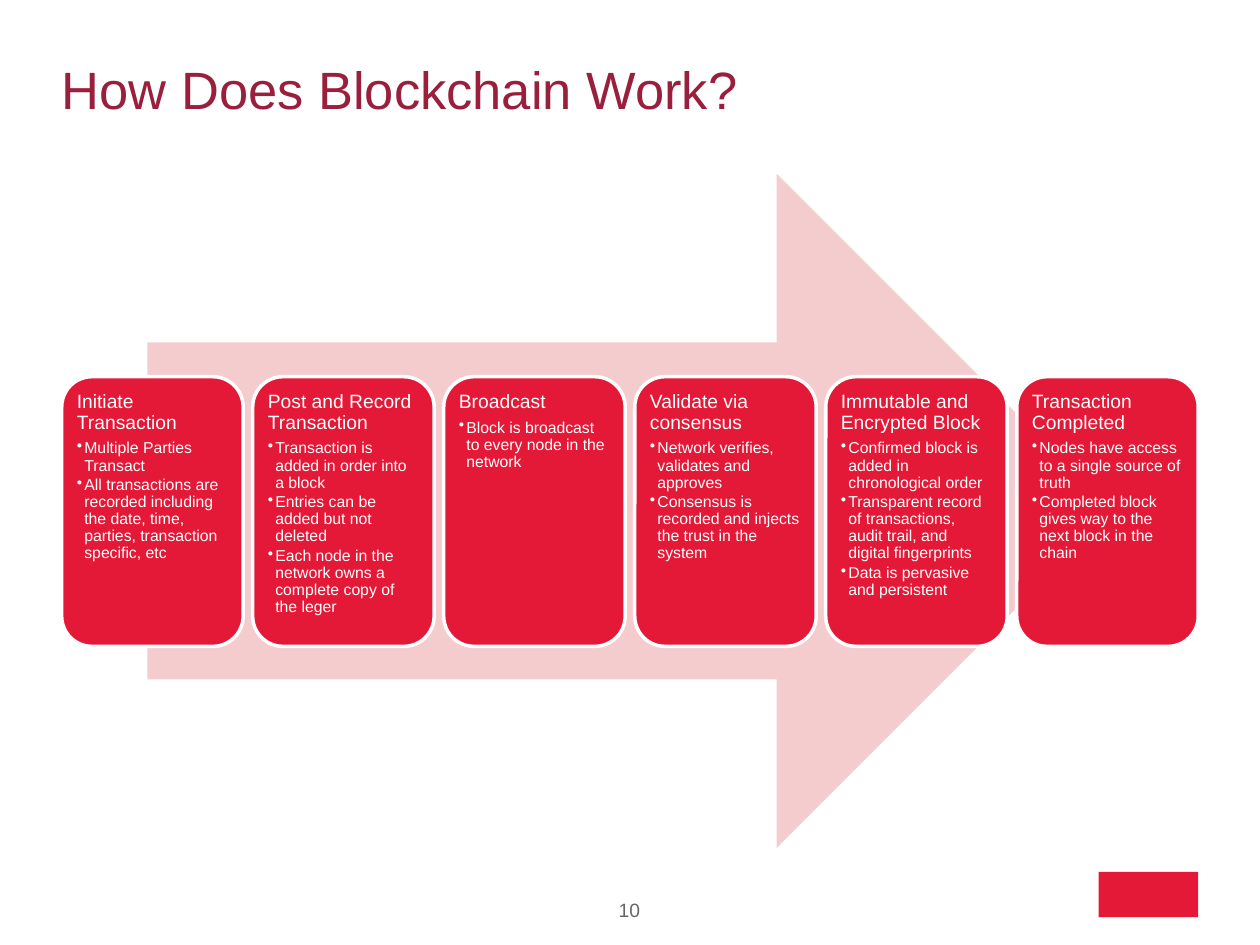
import pptx
import pptx.util
import pptx.dml.color
import pptx.enum.shapes
import pptx.enum.text
import pptx.oxml.ns
import lxml.etree

KINDS = pptx.enum.shapes.MSO_SHAPE
ALIGN = pptx.enum.text.PP_ALIGN
ANCHOR = pptx.enum.text.MSO_ANCHOR

STEPS = [
    ("Initiate Transaction", [
        "Multiple Parties Transact",
        "All transactions are recorded including the date, time, parties, transaction specific, etc"]),
    ("Post and Record Transaction", [
        "Transaction is added in order into a block",
        "Entries can be added but not deleted",
        "Each node in the network owns a complete copy of the leger"]),
    ("Broadcast", [
        "Block is broadcast to every node in the network"]),
    ("Validate via consensus", [
        "Network verifies, validates and approves",
        "Consensus is recorded and injects the trust in the system"]),
    ("Immutable and Encrypted Block", [
        "Confirmed block is added in chronological order",
        "Transparent record of transactions, audit trail, and digital fingerprints",
        "Data is pervasive and persistent"]),
    ("Transaction Completed", [
        "Nodes have access to a single source of truth",
        "Completed block gives way to the next block in the chain"]),
]


def tint(code):
    return pptx.dml.color.RGBColor.from_string(code)


class Deck:
    """Draws styled elements on a slide grid of 100 columns by 75 rows."""

    font = "Arial"
    red = "E31937"
    pink = "F4CCCE"
    wine = "991F3D"
    grey = "666666"
    white = "FFFFFF"

    def __init__(self):
        self.file = pptx.Presentation()
        self.file.slide_width = pptx.util.Inches(10)
        self.file.slide_height = pptx.util.Inches(7.5)
        self.slide = self.file.slides.add_slide(self.file.slide_layouts[5])

    def grid(self, *cells):
        wide, high = self.file.slide_width / 100, self.file.slide_height / 75
        return [round(cell * unit) for cell, unit in zip(cells, (wide, high) * 2)]

    def style(self, para, size, color):
        for run in para.runs:
            run.font.name = self.font
            run.font.size = pptx.util.Pt(size)
            run.font.color.rgb = tint(color)

    def inset(self, frame, gap):
        gap = pptx.util.Inches(gap)
        frame.margin_left = frame.margin_right = gap
        frame.margin_top = frame.margin_bottom = gap
        frame.word_wrap = True

    def title(self, text, *cells):
        head = self.slide.shapes.title
        head.left, head.top, head.width, head.height = self.grid(*cells)
        frame = head.text_frame
        frame.text = text
        self.inset(frame, 0)
        frame.vertical_anchor = ANCHOR.MIDDLE
        frame.paragraphs[0].alignment = ALIGN.LEFT
        self.style(frame.paragraphs[0], 30, self.wine)

    def shape(self, kind, color, *cells):
        item = self.slide.shapes.add_shape(kind, *self.grid(*cells))
        item.shadow.inherit = False
        item.fill.solid()
        item.fill.fore_color.rgb = tint(color)
        item.line.fill.background()
        return item

    def line(self, para, size, after):
        para.alignment = ALIGN.LEFT
        para.line_spacing = 0.9
        para.space_after = pptx.util.Pt(after)
        self.style(para, size, self.white)

    def bullet(self, para):
        para.level = 1
        props = para._p.get_or_add_pPr()
        props.set("marL", str(pptx.util.Inches(0.06)))
        props.set("indent", str(pptx.util.Inches(-0.06)))
        mark = lxml.etree.SubElement(props, pptx.oxml.ns.qn("a:buChar"))
        mark.set("char", "•")

    def card(self, name, points, *cells):
        box = self.shape(KINDS.ROUNDED_RECTANGLE, self.red, *cells)
        box.line.color.rgb = tint(self.white)
        box.line.width = pptx.util.Pt(2)
        frame = box.text_frame
        self.inset(frame, 0.05)
        frame.vertical_anchor = ANCHOR.TOP
        frame.text = name
        self.line(frame.paragraphs[0], 11, 4)
        for point in points:
            para = frame.add_paragraph()
            para.text = point
            self.line(para, 9, 1.5)
            self.bullet(para)

    def number(self, text, *cells):
        frame = self.slide.shapes.add_textbox(*self.grid(*cells)).text_frame
        frame.text = text
        self.inset(frame, 0)
        frame.paragraphs[0].alignment = ALIGN.CENTER
        self.style(frame.paragraphs[0], 11, self.grey)


def main():
    deck = Deck()
    deck.title("How Does Blockchain Work?", 4.9, 2, 90.1, 10.1)
    deck.shape(KINDS.RIGHT_ARROW, deck.pink, 11.7, 13.8, 76.7, 53.5)
    for col, (name, points) in enumerate(STEPS):
        deck.card(name, points, 4.9 + 15.16 * col, 29.9, 14.4, 21.4)
    deck.shape(KINDS.RECTANGLE, deck.red, 87.2, 69.2, 7.9, 3.6)
    deck.number("10", 45.7, 71.3, 8.5, 2.6)
    deck.file.save("out.pptx")


if __name__ == "__main__":
    main()
